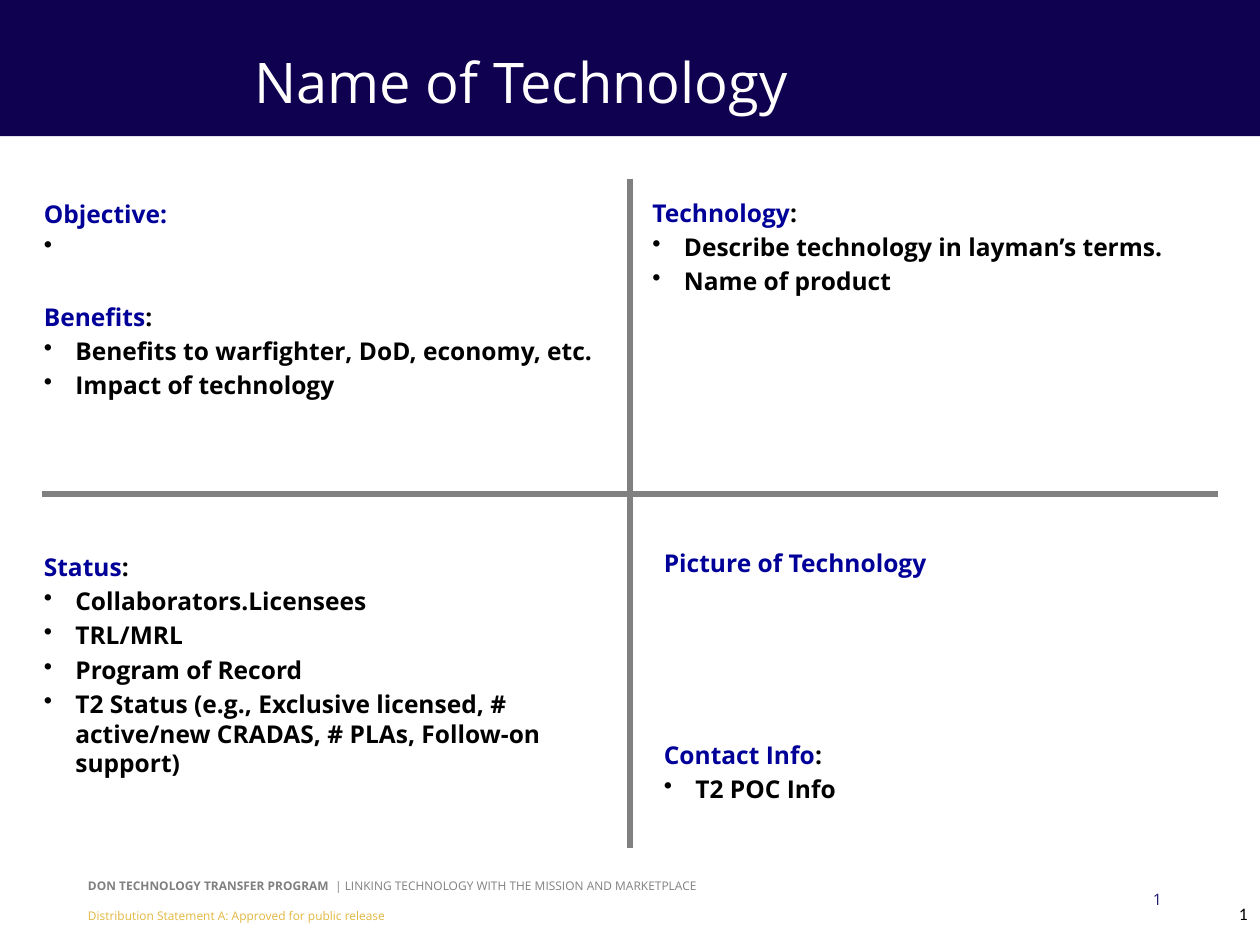
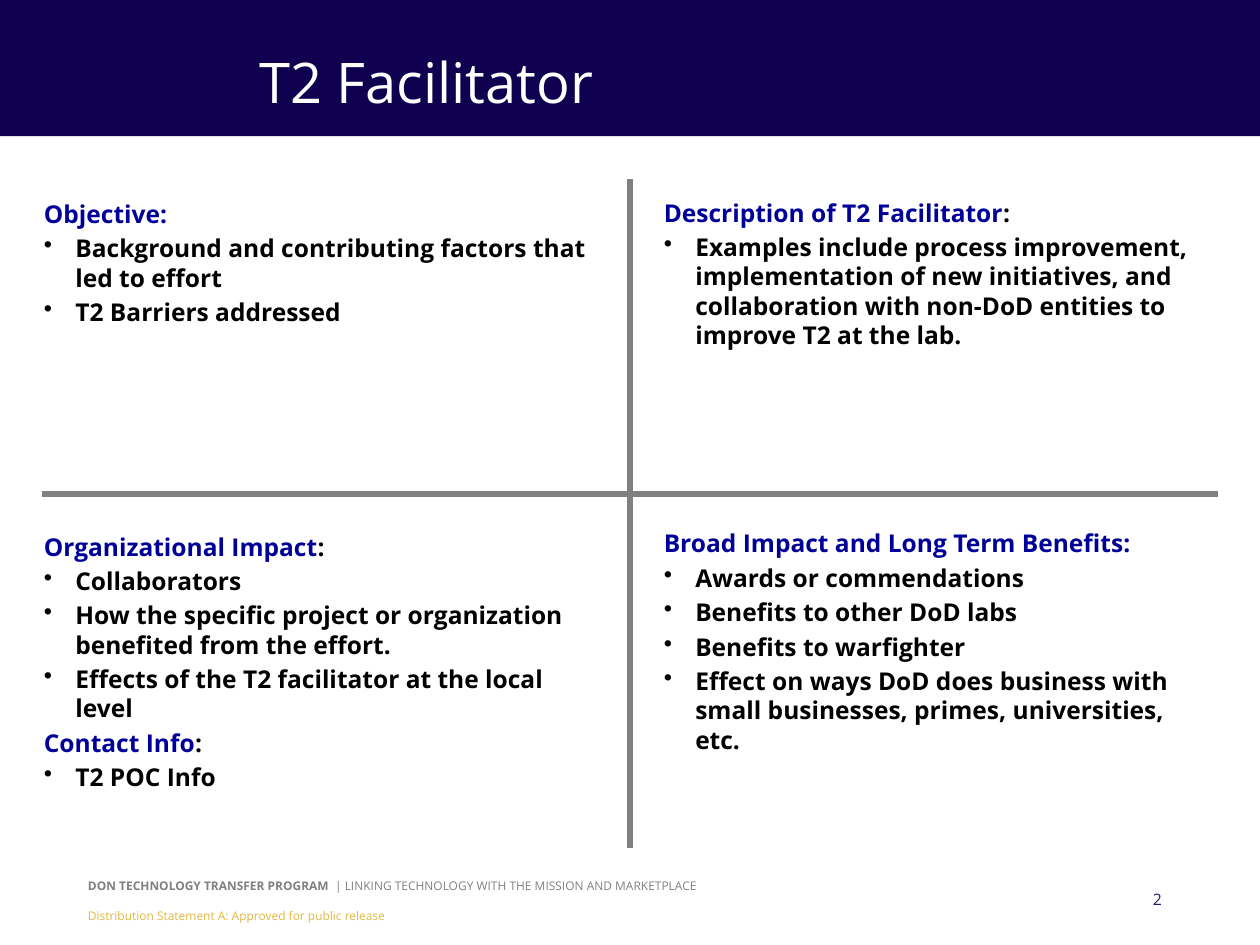
from dataclasses import dataclass

from lxml import etree
from pptx import Presentation
from pptx import util as u
from pptx.dml.color import RGBColor
from pptx.enum import shapes, text
from pptx.oxml.ns import qn

NAVY, BLUE, INDIGO, GOLD = "100150", "000099", "201C6E", "E1B841"
GREY, BLACK, WHITE = "808080", "000000", "FFFFFF"
FONT = "Open Sans"
BODY_SIZE = 14
BODY_GAP = 2.8
INDENT = u.Inches(0.25)


@dataclass
class Span:
    text: str
    size: float
    color: str
    bold: bool = False
    font: str = FONT


@dataclass
class Heading:
    """A blue label, with an optional black tail; before and spacing set its lead."""
    label: str
    tail: str = ""
    before: float = BODY_GAP
    spacing: float = 1.0


@dataclass
class Quadrant:
    left: float
    top: float
    width: float
    height: float
    lines: list[Heading | str]  # a plain string is a bullet


@dataclass
class Page:
    title: str
    title_left: float
    title_width: float
    quadrants: list[Quadrant]


@dataclass
class Rule:
    x1: float
    y1: float
    x2: float
    y2: float


DIVIDERS = [Rule(0.33, 3.92, 9.67, 3.92), Rule(5, 1.42, 5, 6.73)]

PAGES = [
    Page("Name of Technology", 1.92, 5.25, [
        Quadrant(0.25, 1.53, 4.58, 2.64, [
            Heading("Objective:"),
            " ",
            Heading("Benefits", ":", before=22.35),
            "Benefits to warfighter, DoD, economy, etc.",
            "Impact of technology",
        ]),
        Quadrant(5.08, 1.52, 4.5, 2.39, [
            Heading("Technology", ":"),
            "Describe technology in layman’s terms.",
            "Name of product",
        ]),
        Quadrant(0.25, 4.33, 4.67, 2.39, [
            Heading("Status", ":"),
            "Collaborators.Licensees",
            "TRL/MRL",
            "Program of Record",
            "T2 Status (e.g., Exclusive licensed, # active/new CRADAS, "
            "# PLAs, Follow-on support)",
        ]),
        Quadrant(5.17, 4.33, 4.42, 2.83, [
            Heading("Picture of Technology", spacing=0.9),
            Heading("Contact Info", ":", before=92.2),
            "T2 POC Info",
        ]),
    ]),
    Page("T2 Facilitator", 1.96, 6.62, [
        Quadrant(0.25, 1.53, 4.58, 2.64, [
            Heading("Objective:"),
            "Background and contributing factors that led to effort",
            "T2 Barriers addressed",
        ]),
        Quadrant(5.17, 1.52, 4.5, 2.39, [
            Heading("Description of T2 Facilitator", ":"),
            "Examples include process improvement, implementation of new "
            "initiatives, and collaboration with non-DoD entities to improve "
            "T2 at the lab.",
        ]),
        Quadrant(0.25, 4.17, 4.67, 2.39, [
            Heading("Organizational Impact", ":"),
            "Collaborators",
            "How the specific project or organization benefited from the effort.",
            "Effects of the T2 facilitator at the local level",
            Heading("Contact Info", ":"),
            "T2 POC Info",
        ]),
        Quadrant(5.17, 4.17, 4.5, 2.33, [
            Heading("Broad Impact and Long Term Benefits:", spacing=0.9),
            "Awards or commendations",
            "Benefits to other DoD labs",
            "Benefits to warfighter",
            "Effect on ways DoD does business with small businesses, primes, "
            "universities, etc.",
        ]),
    ]),
]


def rgb(color: str) -> RGBColor:
    return RGBColor.from_string(color)


def add_frame(page, left: float, top: float, width: float, height: float):
    box = page.shapes.add_textbox(*map(u.Inches, (left, top, width, height)))
    box.text_frame.word_wrap = True
    return box.text_frame


def add_spans(para, spans: list[Span]) -> None:
    for span in spans:
        run = para.add_run()
        run.text = span.text
        run.font.name = span.font
        run.font.size = u.Pt(span.size)
        run.font.bold = span.bold
        run.font.color.rgb = rgb(span.color)


def add_label(page, left: float, top: float, width: float, height: float,
              spans: list[Span], align=text.PP_ALIGN.LEFT) -> None:
    para = add_frame(page, left, top, width, height).paragraphs[0]
    para.alignment = align
    add_spans(para, spans)


def add_quadrant(page, quadrant: Quadrant) -> None:
    frame = add_frame(page, quadrant.left, quadrant.top,
                      quadrant.width, quadrant.height)
    for index, line in enumerate(quadrant.lines):
        para = frame.add_paragraph() if index else frame.paragraphs[0]
        heading = isinstance(line, Heading)
        if heading:
            para.line_spacing = line.spacing
        if index:
            para.space_before = u.Pt(line.before if heading else BODY_GAP)
        properties = para._p.get_or_add_pPr()
        properties.set("marL", str(INDENT))
        properties.set("indent", str(-INDENT))
        if heading:
            spans = [Span(line.label, BODY_SIZE, BLUE, True)]
            if line.tail:
                spans.append(Span(line.tail, BODY_SIZE, BLACK, True))
        else:
            etree.SubElement(properties, qn("a:buChar")).set("char", "•")
            spans = [Span(line, BODY_SIZE, BLACK, True)]
        add_spans(para, spans)


def add_rule(page, rule: Rule) -> None:
    ends = map(u.Inches, (rule.x1, rule.y1, rule.x2, rule.y2))
    line = page.shapes.add_connector(shapes.MSO_CONNECTOR.STRAIGHT, *ends)
    line.line.color.rgb = rgb(GREY)
    line.line.width = u.Pt(3)
    etree.SubElement(line._element.spPr, qn("a:effectLst"))


def add_band_and_footer(page, number: int) -> None:
    band = page.shapes.add_shape(shapes.MSO_SHAPE.RECTANGLE, 0, 0,
                                 u.Inches(10), u.Inches(1.08))
    band.shadow.inherit = False
    band.fill.solid()
    band.fill.fore_color.rgb = rgb(NAVY)
    band.line.fill.background()
    add_label(page, 0.6, 6.92, 6.86, 0.21, [
        Span("DON TECHNOLOGY TRANSFER PROGRAM ", 6.8, GREY, True),
        Span(" | LINKING TECHNOLOGY WITH THE MISSION AND MARKETPLACE", 6.8, GREY),
    ])
    add_label(page, 0.6, 7.16, 6.86, 0.21, [
        Span("Distribution Statement A: Approved for public release", 6.8, GOLD),
    ])
    add_label(page, 8.86, 7.01, 0.46, 0.34, [Span(str(number), 9, INDIGO)],
              text.PP_ALIGN.RIGHT)


def main() -> None:
    deck = Presentation()
    deck.slide_width, deck.slide_height = u.Inches(10), u.Inches(7.5)
    for number, content in enumerate(PAGES, 1):
        page = deck.slides.add_slide(deck.slide_layouts[6])
        add_band_and_footer(page, number)
        add_label(page, content.title_left, 0.33, content.title_width, 0.75,
                  [Span(content.title, 32, WHITE)])
        for quadrant in content.quadrants:
            add_quadrant(page, quadrant)
        for rule in DIVIDERS:
            add_rule(page, rule)
    add_label(deck.slides[0], 9.32, 7.12, 0.68, 0.46,
              [Span("1", 10, BLACK, font="Calibri")], text.PP_ALIGN.RIGHT)
    deck.save("out.pptx")


if __name__ == "__main__":
    main()
